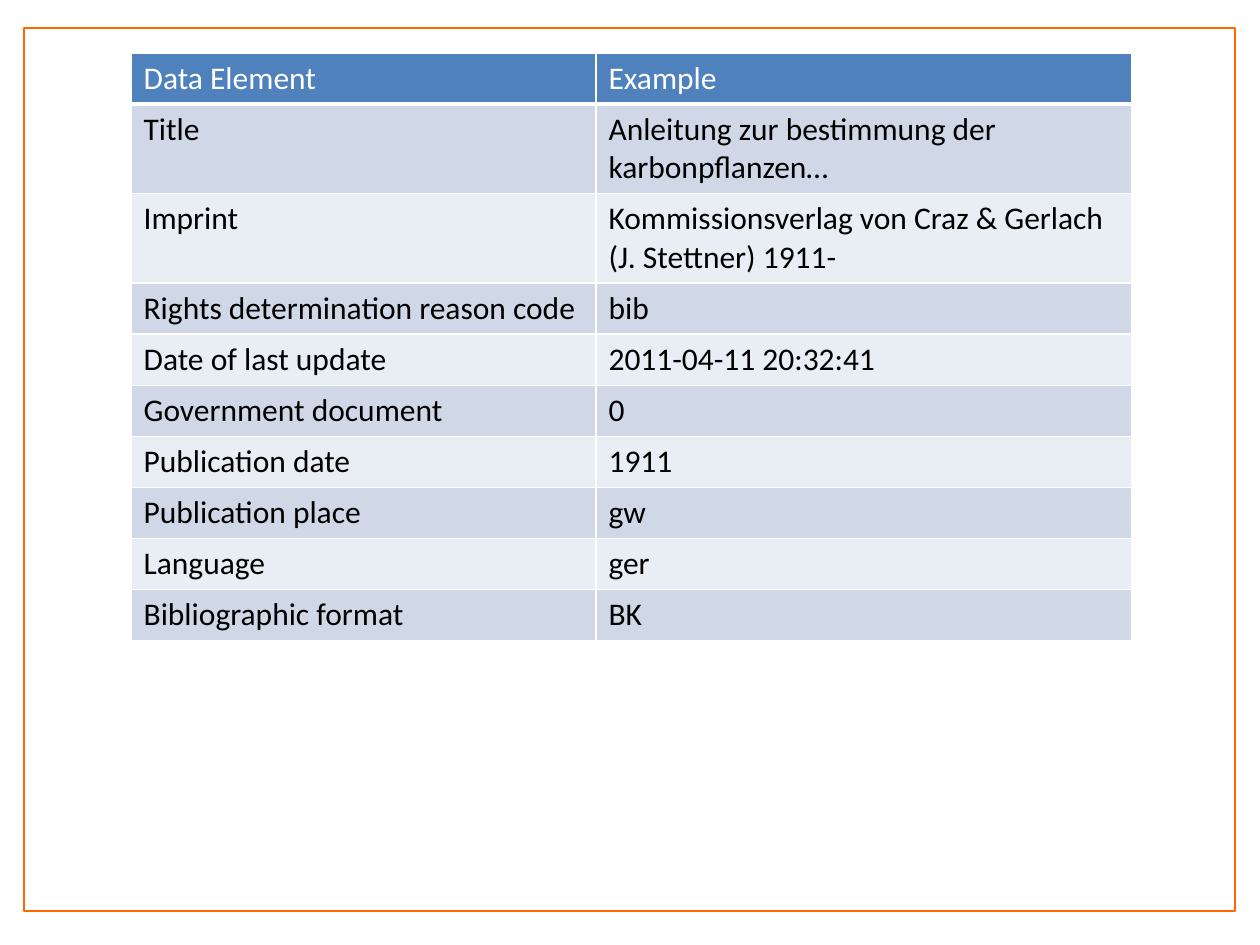
from typing import NamedTuple

from lxml.etree import SubElement
from pptx import Presentation
from pptx.dml.color import RGBColor
from pptx.enum.shapes import MSO_SHAPE as Shape
from pptx.oxml.ns import qn
from pptx.util import Inches, Pt

WHITE = RGBColor(0xFF, 0xFF, 0xFF)
BLACK = RGBColor(0x00, 0x00, 0x00)
ORANGE = RGBColor(0xFF, 0x66, 0x00)
BLUE = RGBColor(0x4F, 0x81, 0xBD)
DARK = RGBColor(0xD0, 0xD8, 0xE8)
LIGHT = RGBColor(0xE9, 0xED, 0xF4)


class Entry(NamedTuple):
    name: str
    value: str


ENTRIES = [
    Entry("Data Element", "Example"),
    Entry("Title", "Anleitung zur bestimmung der karbonpflanzen…"),
    Entry("Imprint", "Kommissionsverlag von Craz & Gerlach (J. Stettner) 1911-"),
    Entry("Rights determination reason code", "bib"),
    Entry("Date of last update", "2011-04-11 20:32:41"),
    Entry("Government document", "0"),
    Entry("Publication date", "1911"),
    Entry("Publication place", "gw"),
    Entry("Language", "ger"),
    Entry("Bibliographic format", "BK"),
]
WIDTHS = (3.69, 4.25)
ROW = 0.38


def add_frame(slide) -> None:
    frame = slide.shapes.add_shape(
        Shape.RECTANGLE, Inches(0.19), Inches(0.22), Inches(9.61), Inches(7.01))
    frame.shadow.inherit = False
    frame.fill.solid()
    frame.fill.fore_color.rgb = WHITE
    frame.line.color.rgb = ORANGE
    frame.line.width = Pt(1)


def set_edges(cell, below: float) -> None:
    """Draw white cell borders; they must precede the fill in the XML."""
    props = cell._tc.get_or_add_tcPr()
    for side, width in (("L", 1), ("R", 1), ("T", 1), ("B", below)):
        edge = SubElement(props, qn(f"a:ln{side}"), w=str(Pt(width)))
        fill = SubElement(edge, qn("a:solidFill"))
        SubElement(fill, qn("a:srgbClr"), val=str(WHITE))


def fill_cell(cell, text: str, row: int) -> None:
    head = row == 0
    set_edges(cell, 3 if head else 1)
    cell.fill.solid()
    cell.fill.fore_color.rgb = BLUE if head else DARK if row % 2 else LIGHT
    cell.text = text
    font = cell.text_frame.paragraphs[0].font
    font.name = "Calibri"
    font.size = Pt(18)
    font.bold = False
    font.color.rgb = WHITE if head else BLACK


def add_entries(slide) -> None:
    table = slide.shapes.add_table(
        len(ENTRIES), len(WIDTHS), Inches(1.04), Inches(0.42),
        Inches(sum(WIDTHS)), Inches(ROW * len(ENTRIES))).table
    for column, width in zip(table.columns, WIDTHS):
        column.width = Inches(width)
    for row, entry in enumerate(ENTRIES):
        table.rows[row].height = Inches(ROW)
        for col, text in enumerate(entry):
            fill_cell(table.cell(row, col), text, row)


def main() -> None:
    deck = Presentation()
    deck.slide_width, deck.slide_height = Inches(10), Inches(7.5)
    slide = deck.slides.add_slide(deck.slide_layouts[6])

    # Page border
    add_frame(slide)

    # Data elements with examples
    add_entries(slide)

    deck.save("out.pptx")


if __name__ == "__main__":
    main()
